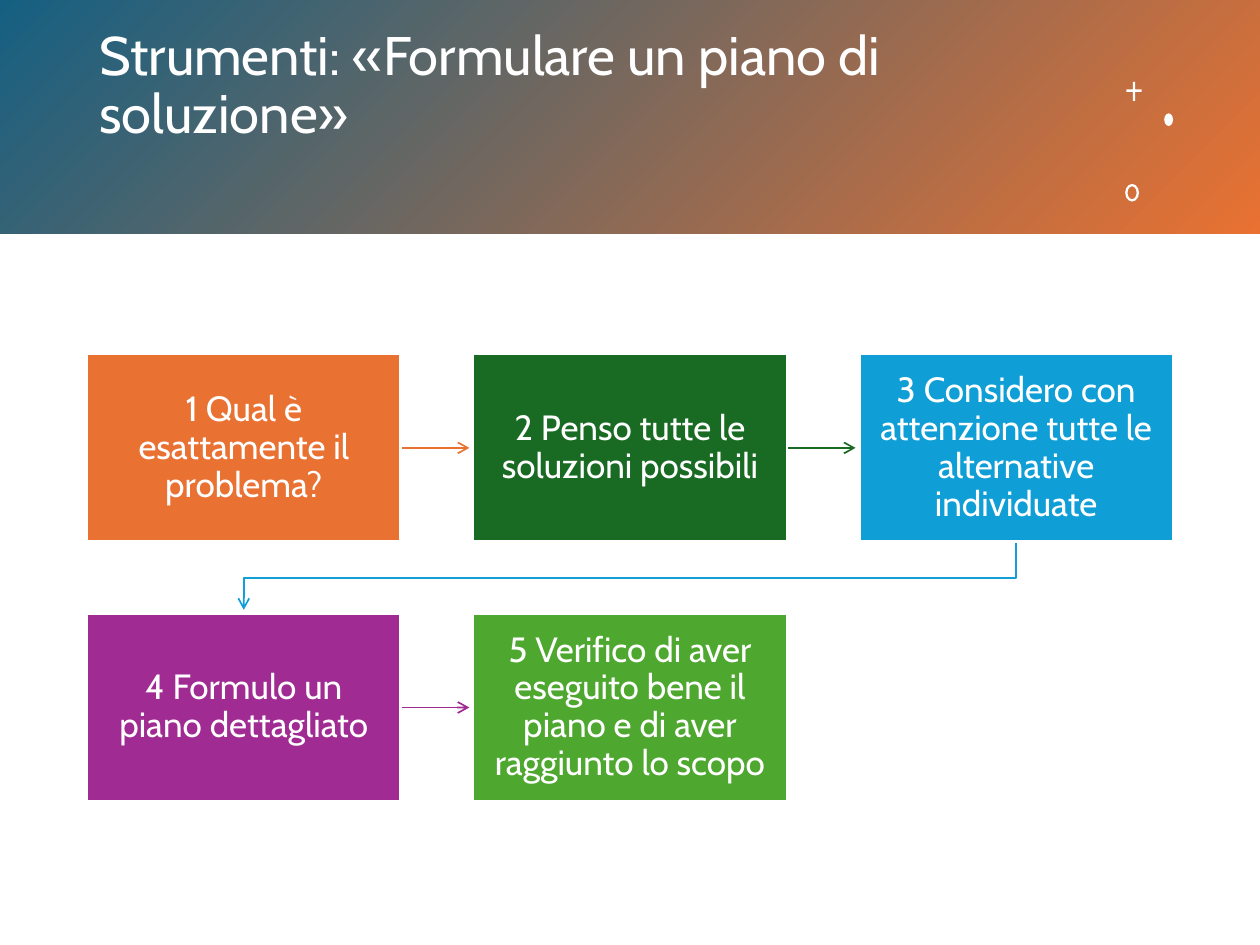
"""Build the problem-solving steps slide: title band and five linked boxes."""
from lxml.etree import SubElement
from pptx import Presentation
from pptx.dml.color import RGBColor
from pptx.enum.dml import MSO_LINE
from pptx.enum.shapes import MSO_CONNECTOR, MSO_SHAPE
from pptx.enum.text import MSO_ANCHOR, MSO_AUTO_SIZE, PP_ALIGN
from pptx.oxml.ns import qn
from pptx.util import Inches, Pt

RECT, OVAL, DONUT = MSO_SHAPE.RECTANGLE, MSO_SHAPE.OVAL, MSO_SHAPE.DONUT
STRAIGHT, SOLID = MSO_CONNECTOR.STRAIGHT, MSO_LINE.SOLID
MIDDLE, NO_FIT = MSO_ANCHOR.MIDDLE, MSO_AUTO_SIZE.NONE
LEFT, CENTER = PP_ALIGN.LEFT, PP_ALIGN.CENTER

COLORS = {
    "white": "FFFFFF", "teal": "156082", "orange": "E97132", "green": "196B24",
    "blue": "0F9ED5", "purple": "A02B93", "lime": "4EA72E",
}
RGB = {name: RGBColor.from_string(value) for name, value in COLORS.items()}
STEPS = [
    ("1 Qual è esattamente il problema?", "orange"),
    ("2 Penso tutte le soluzioni possibili", "green"),
    ("3 Considero con attenzione tutte le alternative individuate", "blue"),
    ("4 Formulo un piano dettagliato", "purple"),
    ("5 Verifico di aver eseguito bene il piano e di aver raggiunto lo scopo", "lime"),
]
COLS = 3
LEFT_EDGE, TOP_EDGE = Inches(0.69), Inches(2.81)
BOX_W, BOX_H = Inches(2.49), Inches(1.49)
GAP_X, GAP_Y = Inches(0.575), Inches(0.57)
CLEAR = Inches(0.03)


def write(sp, text, size=20, align=CENTER, margins=(0.12, 0.13, 0.12, 0.13)):
    tf = sp.text_frame
    tf.word_wrap, tf.auto_size, tf.vertical_anchor = True, NO_FIT, MIDDLE
    tf.margin_left, tf.margin_top, tf.margin_right, tf.margin_bottom = map(Inches, margins)
    p = tf.paragraphs[0]
    p.alignment, p.line_spacing = align, 0.9
    r = p.add_run()
    r.text = text
    r.font.name, r.font.size, r.font.color.rgb = "Cabin", Pt(size), RGB["white"]


def style_arrow(sp, color):
    sp.line.color.rgb = RGB[color]
    sp.line.width = Pt(1)
    sp.line.dash_style = SOLID
    SubElement(sp.line._get_or_add_ln(), qn("a:tailEnd"), type="arrow")
    SubElement(sp._element.spPr, qn("a:effectLst"))


prs = Presentation()
prs.slide_width, prs.slide_height = Inches(10), Inches(7.5)
s = prs.slides.add_slide(prs.slide_layouts[5])

title = s.shapes.title
title.left, title.top, title.width, title.height = map(Inches, (0.69, 0.33, 8.06, 1.19))
write(title, "Strumenti: «Formulare un piano di soluzione»", size=31, align=LEFT,
      margins=(0.1, 0.05, 0.1, 0.52))

band = s.shapes.add_shape(RECT, 0, 0, prs.slide_width, Inches(1.85))
band.shadow.inherit = False
band.line.fill.background()
band.fill.gradient()
band.fill.gradient_angle = 315
for stop, color, position in zip(band.fill.gradient_stops, ("teal", "orange"), (0, 1)):
    stop.color.rgb, stop.position = RGB[color], position
title._element.addprevious(band._element)

plus = [(8.94, 0.71), (8.99, 0.71), (8.99, 0.65), (9.01, 0.65), (9.01, 0.71), (9.06, 0.71),
        (9.06, 0.73), (9.01, 0.73), (9.01, 0.8), (8.99, 0.8), (8.99, 0.73), (8.94, 0.73)]
points = [(Inches(x), Inches(y)) for x, y in plus]
builder = s.shapes.build_freeform(*points[0])
builder.add_line_segments(points[1:], close=True)
cross = builder.convert_to_shape()
dot = s.shapes.add_shape(OVAL, *map(Inches, (9.24, 0.9, 0.07, 0.1)))
ring = s.shapes.add_shape(DONUT, *map(Inches, (8.93, 1.46, 0.11, 0.14)))
ring.adjustments[0] = 0.17
for sp in (cross, dot, ring):
    sp.shadow.inherit = False
    sp.fill.solid()
    sp.fill.fore_color.rgb = RGB["white"]
    sp.line.fill.background()

boxes = []
for i, (text, color) in enumerate(STEPS):
    row, col = divmod(i, COLS)
    x, y = LEFT_EDGE + col * (BOX_W + GAP_X), TOP_EDGE + row * (BOX_H + GAP_Y)
    sp = s.shapes.add_shape(RECT, x, y, BOX_W, BOX_H)
    sp.shadow.inherit = False
    sp.fill.solid()
    sp.fill.fore_color.rgb = RGB[color]
    sp.line.color.rgb = RGB["white"]
    sp.line.width = Pt(1.5)
    write(sp, text)
    boxes.append(sp)

for i, (box, target) in enumerate(zip(boxes, boxes[1:])):
    if target.top == box.top:
        y = box.top + BOX_H // 2
        arrow = s.shapes.add_connector(STRAIGHT, box.left + BOX_W, y, target.left - CLEAR, y)
        arrow.begin_connect(box, 3)
    else:
        x1, x2 = box.left + BOX_W // 2, target.left + BOX_W // 2
        y1, y2 = box.top + BOX_H, target.top - CLEAR
        turn = y1 + GAP_Y // 2
        builder = s.shapes.build_freeform(x1, y1)
        builder.add_line_segments([(x1, turn), (x2, turn), (x2, y2)], close=False)
        arrow = builder.convert_to_shape()
        arrow.fill.background()
    style_arrow(arrow, STEPS[i][1])
    box._element.addprevious(arrow._element)

prs.save("out.pptx")
